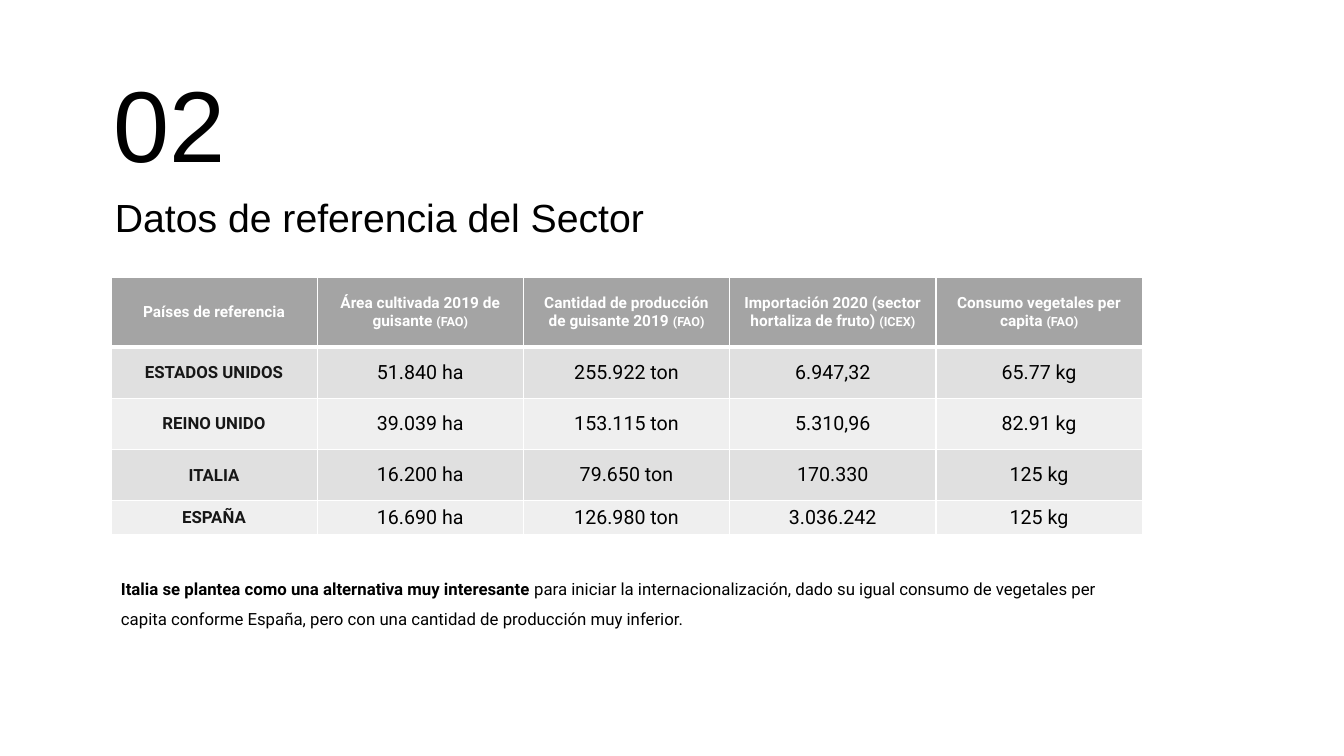
from lxml import etree
from pptx import Presentation
from pptx.dml.color import RGBColor
from pptx.enum.text import MSO_ANCHOR, MSO_AUTO_SIZE, PP_ALIGN
from pptx.oxml.ns import qn
from pptx.util import Inches, Pt

LEFT, CENTER = PP_ALIGN.LEFT, PP_ALIGN.CENTER
TOP, MIDDLE = MSO_ANCHOR.TOP, MSO_ANCHOR.MIDDLE
NO_FIT = MSO_AUTO_SIZE.NONE
TITLE_ONLY = 5

COLORS = {
    "black": "000000",
    "white": "FFFFFF",
    "label": "171717",
    "header": "A4A4A4",
    "odd": "E0E0E0",
    "even": "EFEFEF",
}

HEADERS = [
    ("Países de referencia", "", 0.1),
    ("Área cultivada 2019 de guisante ", "(FAO)", 0.1),
    ("Cantidad de producción de guisante 2019 ", "(FAO)", 0.16),
    ("Importación 2020 (sector hortaliza de fruto) ", "(ICEX)", 0.1),
    ("Consumo vegetales per capita ", "(FAO)", 0.1),
]
COUNTRIES = [
    ("ESTADOS UNIDOS", "51.840 ha", "255.922 ton", "6.947,32", "65.77 kg"),
    ("REINO UNIDO", "39.039 ha", "153.115 ton", "5.310,96", "82.91 kg"),
    ("ITALIA", "16.200 ha", "79.650 ton", "170.330", "125 kg"),
    ("ESPAÑA", "16.690 ha", "126.980 ton", "3.036.242", "125 kg"),
]
ROW_HEIGHTS = [0.69, 0.51, 0.51, 0.51, 0.33]


def add_span(para, text, size, font="Roboto", color="black", bold=False):
    span = para.add_run()
    span.text = text
    span.font.size = Pt(size)
    span.font.name = font
    span.font.bold = bold
    span.font.color.rgb = RGBColor.from_string(COLORS[color])


def prepare_frame(frame):
    frame.word_wrap = True
    frame.auto_size = NO_FIT
    frame.vertical_anchor = TOP
    frame.margin_left = frame.margin_top = Inches(0.01)
    frame.margin_right = frame.margin_bottom = 0
    para = frame.paragraphs[0]
    para.alignment = LEFT
    return para


def add_text_box(page, left, top, width, height):
    box = page.shapes.add_textbox(
        Inches(left), Inches(top), Inches(width), Inches(height))
    return prepare_frame(box.text_frame)


def add_heading(page, left, top, width):
    number = add_text_box(page, left, top, 1.63, 1.23)
    add_span(number, "02", 72, "Arial")
    title = page.shapes.title
    title.left, title.top = Inches(left + 0.01), Inches(top + 1.31)
    title.width, title.height = Inches(width), Inches(0.6)
    para = prepare_frame(title.text_frame)
    add_span(para, "Datos de referencia del Sector", 28, "Arial")


def style_cell(cell, fill, top_width, bottom_width, side_margin):
    cell.margin_left = cell.margin_right = Inches(side_margin)
    cell.margin_top = cell.margin_bottom = 0
    cell.vertical_anchor = MIDDLE
    properties = cell._tc.get_or_add_tcPr()
    widths = {"a:lnL": 1, "a:lnR": 1, "a:lnT": top_width, "a:lnB": bottom_width}
    for edge, width in widths.items():
        line = etree.SubElement(properties, qn(edge), w=str(Pt(width)))
        solid = etree.SubElement(line, qn("a:solidFill"))
        etree.SubElement(solid, qn("a:srgbClr"), val=COLORS["white"])
    cell.fill.solid()
    cell.fill.fore_color.rgb = RGBColor.from_string(COLORS[fill])
    para = cell.text_frame.paragraphs[0]
    para.alignment = CENTER
    return para


def add_sector_table(page, left, top, width):
    table = page.shapes.add_table(
        len(ROW_HEIGHTS), len(HEADERS), Inches(left), Inches(top),
        Inches(width), Inches(sum(ROW_HEIGHTS))).table
    for column in table.columns:
        column.width = Inches(width / len(HEADERS))
    for row, height in zip(table.rows, ROW_HEIGHTS):
        row.height = Inches(height)
    for index, (label, agency, margin) in enumerate(HEADERS):
        para = style_cell(table.cell(0, index), "header", 1, 3, margin)
        add_span(para, label, 11, color="white", bold=True)
        if agency:
            add_span(para, agency, 9, color="white", bold=True)
    for row, values in enumerate(COUNTRIES, start=1):
        fill = "odd" if row % 2 else "even"
        for index, value in enumerate(values):
            para = style_cell(
                table.cell(row, index), fill, 3 if row == 1 else 1, 1, 0)
            if index == 0:
                add_span(para, value, 12, color="label", bold=True)
            else:
                add_span(para, value, 14)


def add_conclusion(page, left, top, width):
    para = add_text_box(page, left, top, width, 0.59)
    para.line_spacing = 1.5
    add_span(para, "Italia se plantea como una alternativa muy interesante ",
             12, bold=True)
    add_span(para, "para iniciar la internacionalización, dado su igual consumo "
             "de vegetales per capita conforme España, pero con una cantidad "
             "de producción muy inferior.", 12)


def main():
    deck = Presentation()
    deck.slide_width, deck.slide_height = Inches(13.33), Inches(7.5)
    page = deck.slides.add_slide(deck.slide_layouts[TITLE_ONLY])
    add_heading(page, 1.12, 0.6, 5.62)
    add_sector_table(page, 1.1, 2.75, 10.23)
    add_conclusion(page, 1.19, 5.63, 10.06)
    deck.save("out.pptx")


if __name__ == "__main__":
    main()
